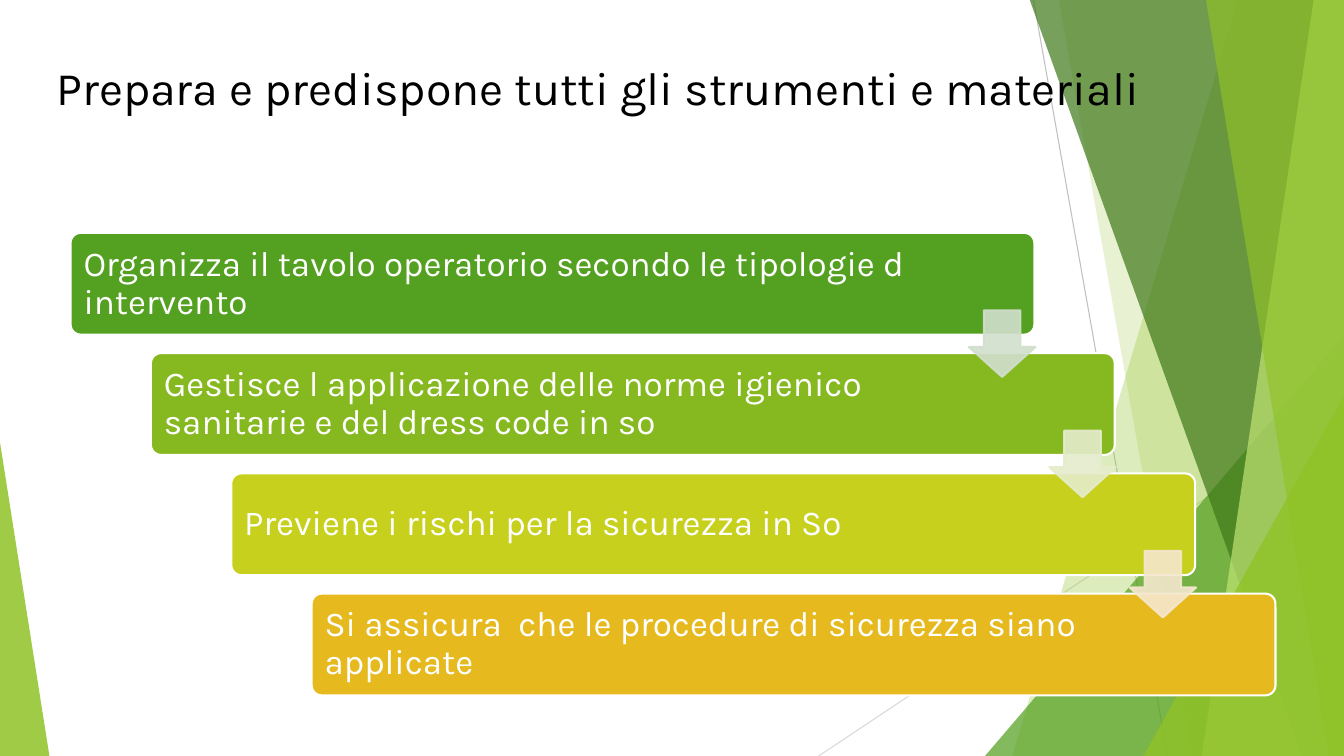
from lxml import etree
from pptx import Presentation
from pptx.dml.color import RGBColor
from pptx.enum.shapes import MSO_CONNECTOR, MSO_SHAPE
from pptx.enum.text import MSO_ANCHOR, MSO_AUTO_SIZE, PP_ALIGN
from pptx.oxml.ns import qn
from pptx.util import Inches, Pt

STRAIGHT = MSO_CONNECTOR.STRAIGHT
TRIANGLE = MSO_SHAPE.ISOSCELES_TRIANGLE
ROUNDED = MSO_SHAPE.ROUNDED_RECTANGLE
DOWN_ARROW = MSO_SHAPE.DOWN_ARROW
MIDDLE = MSO_ANCHOR.MIDDLE
LEFT = PP_ALIGN.LEFT
NO_AUTOFIT = MSO_AUTO_SIZE.NONE

FONT = "Karla"
WIDTH, HEIGHT = 13.33, 7.5
TOP = -0.01
COLORS = {
    "black": "000000",
    "white": "FFFFFF",
    "gray": "BFBFBF",
    "light_gray": "D9D9D9",
    "lime": "90C226",
    "pale_lime": "C0E474",
    "green": "54A021",
    "dark_green": "3F7819",
    "leaf": "86B820",
    "yellow": "C7D01D",
    "gold": "E6B91E",
    "pale_green": "D1DFCD",
    "pale_leaf": "E5ECCB",
    "pale_gold": "F5E7CD",
}

TITLE = "Prepara e predispone tutti gli strumenti e materiali"
STEPS = [
    ("Organizza il tavolo operatorio secondo le tipologie d intervento", "green", 8.39),
    ("Gestisce l applicazione delle norme igienico sanitarie e del dress code in so", "leaf", 8.05),
    ("Previene i rischi per la sicurezza in So", "yellow", 8.05),
    ("Si assicura  che le procedure di sicurezza siano applicate", "gold", 8.05),
]
ARROW_COLORS = ["pale_green", "pale_leaf", "pale_gold"]
STEP_LEFT, STEP_TOP, STEP_WIDTH, STEP_HEIGHT = 0.7, 2.31, 9.56, 1.01
SHIFT_X, SHIFT_Y = 0.797, 1.193
ARROW_LEFT, ARROW_TOP, ARROW_SIZE = 9.61, 3.08, 0.66
TEXT_INSET = 0.03


def paint(color_format, color, opacity=100):
    color_format.rgb = RGBColor.from_string(COLORS[color])


def set_opacity(solid_fill, opacity):
    alpha = etree.SubElement(solid_fill[0], qn("a:alpha"))
    alpha.set("val", str(opacity * 1000))


def style(shape, fill, opacity=100, line=None):
    shape.shadow.inherit = False
    shape.fill.solid()
    paint(shape.fill.fore_color, fill)
    if line:
        paint(shape.line.color, line)
        shape.line.width = Pt(1.5)
    else:
        shape.line.fill.background()
    if opacity < 100:
        for solid_fill in shape.element.spPr.iter(qn("a:solidFill")):
            set_opacity(solid_fill, opacity)


def add_line(slide, start, end, color):
    points = [Inches(value) for value in (*start, *end)]
    connector = slide.shapes.add_connector(STRAIGHT, *points)
    paint(connector.line.color, color)
    connector.line.width = Pt(0.75)
    etree.SubElement(connector.element.spPr, qn("a:effectLst"))


def add_facet(slide, top_left, bottom_left, color, opacity):
    corners = [(WIDTH, TOP), (WIDTH, HEIGHT), (bottom_left, HEIGHT)]
    builder = slide.shapes.build_freeform(Inches(top_left), Inches(TOP))
    builder.add_line_segments([(Inches(x), Inches(y)) for x, y in corners], close=True)
    style(builder.convert_to_shape(), color, opacity)


def add_preset(slide, kind, box, adjustments, fill, opacity=100, line=None):
    shape = slide.shapes.add_shape(kind, *[Inches(value) for value in box])
    for index, value in enumerate(adjustments):
        shape.adjustments[index] = value
    style(shape, fill, opacity, line)


def write(text_frame, text, size, color):
    text_frame.word_wrap = True
    text_frame.auto_size = NO_AUTOFIT
    text_frame.vertical_anchor = MIDDLE
    paragraph = text_frame.paragraphs[0]
    paragraph.alignment = LEFT
    run = paragraph.add_run()
    run.text = text
    run.font.name = FONT
    run.font.size = Pt(size)
    paint(run.font.color, color)
    return paragraph


def add_backdrop(slide):
    add_line(slide, (10.25, 0), (11.58, HEIGHT), "gray")
    add_line(slide, (WIDTH, 4.03), (8.12, HEIGHT), "light_gray")
    add_facet(slide, 12.28, 10.04, "lime", 30)
    add_facet(slide, 10.5, 11.83, "lime", 20)
    add_preset(slide, TRIANGLE, (9.77, 3.33, 3.56, 4.17), [1], "green", 72)
    add_facet(slide, 10.21, 12.91, "dark_green", 70)
    add_facet(slide, 13.03, 11.92, "pale_lime", 70)
    add_facet(slide, 11.96, 13.18, "lime", 65)
    add_preset(slide, TRIANGLE, (11.34, 3.93, 1.99, 3.57), [1], "lime", 80)
    add_preset(slide, TRIANGLE, (0, 4.39, 0.49, 3.11), [0], "lime", 85)


def add_title(slide):
    title = slide.shapes.title
    title.left, title.top = Inches(0.46), Inches(0.38)
    title.width, title.height = Inches(12.02), Inches(0.96)
    write(title.text_frame, TITLE, 33.3, "black")
    title.element.getparent().append(title.element)


def add_step(slide, index, text, color, text_width):
    left, top = STEP_LEFT + index * SHIFT_X, STEP_TOP + index * SHIFT_Y
    box = (left, top, STEP_WIDTH, STEP_HEIGHT)
    add_preset(slide, ROUNDED, box, [0.1], color, line="white")
    text_box = slide.shapes.add_textbox(
        Inches(left + TEXT_INSET), Inches(top + TEXT_INSET),
        Inches(text_width), Inches(STEP_HEIGHT - 2 * TEXT_INSET))
    frame = text_box.text_frame
    frame.margin_left = frame.margin_right = Inches(0.1)
    frame.margin_top = frame.margin_bottom = Inches(0.1)
    write(frame, text, 25, "white").line_spacing = 0.9


def add_arrow(slide, index, color):
    left, top = ARROW_LEFT + index * SHIFT_X, ARROW_TOP + index * SHIFT_Y
    box = (left, top, ARROW_SIZE, ARROW_SIZE)
    add_preset(slide, DOWN_ARROW, box, [0.55, 0.45], color, 90, color)


def main():
    presentation = Presentation()
    presentation.slide_width = Inches(WIDTH)
    presentation.slide_height = Inches(HEIGHT)
    slide = presentation.slides.add_slide(presentation.slide_layouts[5])
    slide.background.fill.solid()
    paint(slide.background.fill.fore_color, "white")
    add_backdrop(slide)
    add_title(slide)
    for index, step in enumerate(STEPS):
        add_step(slide, index, *step)
    for index, color in enumerate(ARROW_COLORS):
        add_arrow(slide, index, color)
    presentation.save("out.pptx")


if __name__ == "__main__":
    main()
